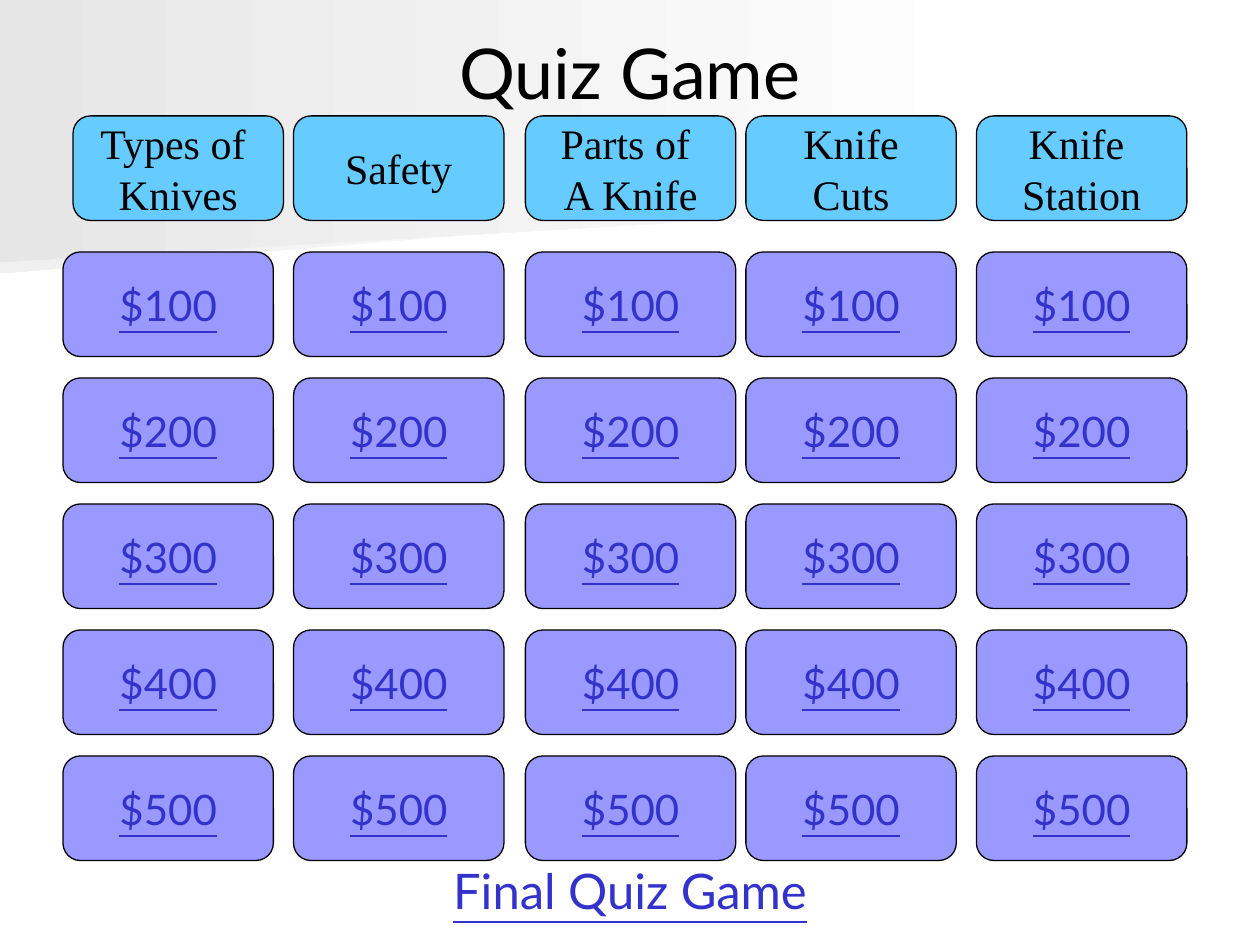
from dataclasses import dataclass

import pptx
import pptx.dml.color
import pptx.enum.shapes
import pptx.enum.text
import pptx.util

Inches = pptx.util.Inches


@dataclass(frozen=True)
class Theme:
    white: str = "FFFFFF"
    black: str = "000000"
    header_fill: str = "66CCFF"
    price_fill: str = "9999FF"
    link: str = "3333CC"
    outer_shade: str = "F0F0F0"
    inner_shade: str = "E6E6E6"
    body_font: str = "Lato"
    header_font: str = "Times New Roman"
    title_size: int = 40
    final_size: int = 28
    card_size: int = 24
    outline: float = 0.75


@dataclass(frozen=True)
class Category:
    lines: tuple[str, ...]
    left: float
    header_shift: float = 0


@dataclass(frozen=True)
class Band:
    points: tuple[tuple[float, float], ...]
    shade: str


THEME = Theme()
CATEGORIES = (
    Category(("Types of ", "Knives"), 0.5, header_shift=0.08),
    Category(("Safety",), 2.33),
    Category(("Parts of ", "A Knife"), 4.17),
    Category(("Knife Cuts",), 5.92),
    Category(("Knife ", "Station"), 7.75),
)
BANDS = (
    Band(((7.78, 1.53), (0, 2.17), (0, 1.01), (7.79, 1.01), (7.78, 1.28)), THEME.outer_shade),
    Band(((7.92, 1.62), (0, 2.08), (0, 0), (7.92, 0)), THEME.inner_shade),
)
PRICES = range(100, 600, 100)
CARD_WIDTH, CARD_HEIGHT = 1.67, 0.83
HEADER_TOP, FIRST_PRICE_TOP, ROW_STEP = 0.92, 2, 1


def color(value: str) -> pptx.dml.color.RGBColor:
    return pptx.dml.color.RGBColor.from_string(value)


def write_text(shape, lines: tuple[str, ...], *, size: int, ink: str,
               font: str = THEME.body_font, underline: bool = False) -> None:
    frame = shape.text_frame
    frame.word_wrap = True
    frame.vertical_anchor = pptx.enum.text.MSO_ANCHOR.MIDDLE
    for index, line in enumerate(lines):
        paragraph = frame.add_paragraph() if index else frame.paragraphs[0]
        paragraph.alignment = pptx.enum.text.PP_ALIGN.CENTER
        run = paragraph.add_run()
        run.text = line
        run.font.size = pptx.util.Pt(size)
        run.font.name = font
        run.font.color.rgb = color(ink)
        if underline:
            run.font.underline = True


def draw_band(slide, band: Band) -> None:
    start, *others = [(Inches(x), Inches(y)) for x, y in band.points]
    builder = slide.shapes.build_freeform(*start)
    builder.add_line_segments(others, close=True)
    shape = builder.convert_to_shape()
    shape.shadow.inherit = False
    shape.line.fill.background()
    shape.fill.gradient()
    shape.fill.gradient_angle = 180
    for stop, position, value in zip(shape.fill.gradient_stops, (0, 1), (THEME.white, band.shade)):
        stop.position = position
        stop.color.rgb = color(value)


def draw_card(slide, left: float, top: float, fill: str):
    shape = slide.shapes.add_shape(
        pptx.enum.shapes.MSO_SHAPE.FLOWCHART_ALTERNATE_PROCESS,
        Inches(left), Inches(top), Inches(CARD_WIDTH), Inches(CARD_HEIGHT))
    shape.shadow.inherit = False
    shape.fill.solid()
    shape.fill.fore_color.rgb = color(fill)
    shape.line.color.rgb = color(THEME.black)
    shape.line.width = pptx.util.Pt(THEME.outline)
    return shape


def draw_category(slide, category: Category) -> None:
    header = draw_card(slide, category.left + category.header_shift, HEADER_TOP, THEME.header_fill)
    write_text(header, category.lines, size=THEME.card_size, ink=THEME.black, font=THEME.header_font)
    for row, price in enumerate(PRICES):
        card = draw_card(slide, category.left, FIRST_PRICE_TOP + row * ROW_STEP, THEME.price_fill)
        write_text(card, (f"${price}",), size=THEME.card_size, ink=THEME.link, underline=True)


def add_caption(slide, top: float):
    return slide.shapes.add_textbox(Inches(0.5), Inches(top), Inches(9), Inches(0.53))


def main() -> None:
    presentation = pptx.Presentation()
    presentation.slide_width = Inches(10)
    presentation.slide_height = Inches(7.5)
    slide = presentation.slides.add_slide(presentation.slide_layouts[6])
    slide.background.fill.solid()
    slide.background.fill.fore_color.rgb = color(THEME.white)
    for band in BANDS:
        draw_band(slide, band)
    write_text(add_caption(slide, 0.3), ("Quiz Game",), size=THEME.title_size, ink=THEME.black)
    for category in CATEGORIES:
        draw_category(slide, category)
    write_text(add_caption(slide, 6.8), ("Final Quiz Game",),
               size=THEME.final_size, ink=THEME.link, underline=True)
    presentation.save("out.pptx")


if __name__ == "__main__":
    main()
